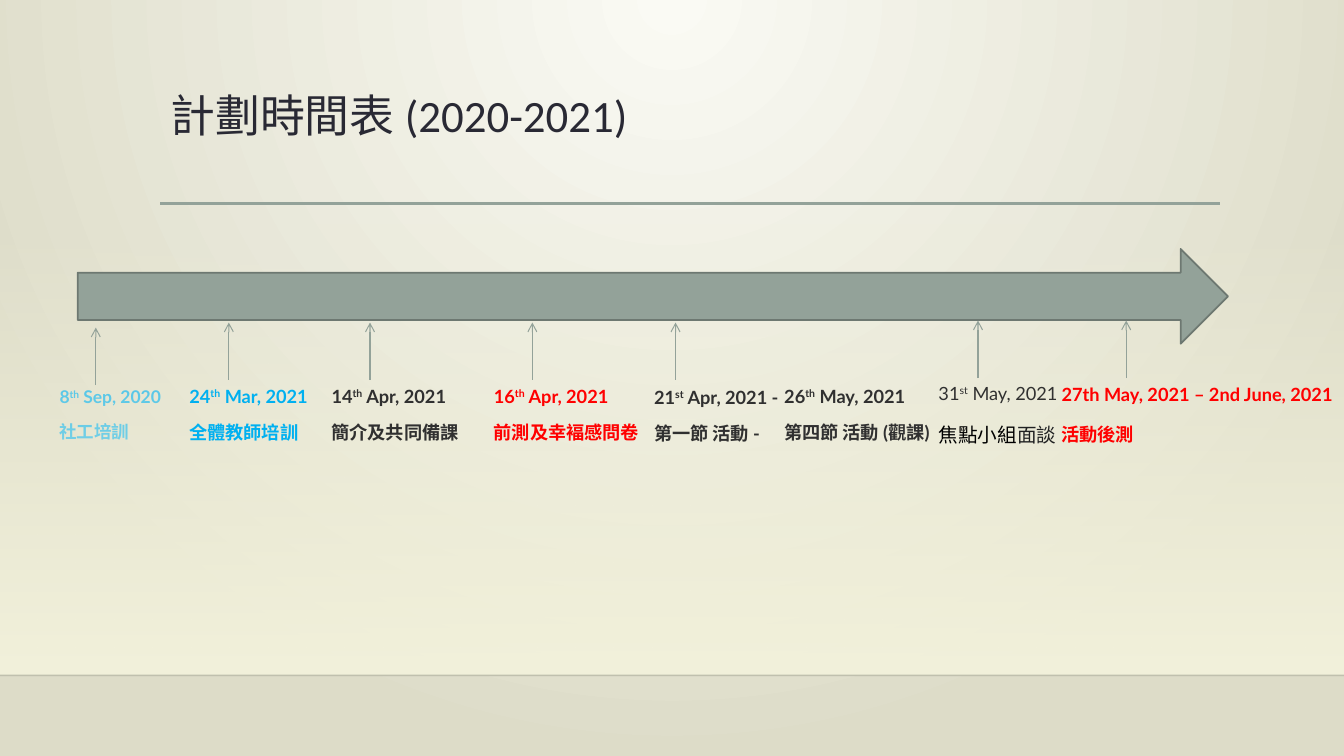
import dataclasses

import pptx
import pptx.dml.color
import pptx.enum.shapes
import pptx.enum.text
import pptx.oxml
import pptx.oxml.ns
import pptx.util

Inches = pptx.util.Inches
qn = pptx.oxml.ns.qn
NAMESPACE = pptx.oxml.ns.nsdecls("a")


@dataclasses.dataclass(frozen=True)
class Theme:
    glow: str = "FAFAF4"
    edge: str = "DDDCC8"
    wall: str = "F3F2DC"
    horizon: str = "000001"
    sage: str = "93A299"
    sage_dark: str = "6D7871"
    title: str = "292934"
    training: str = "00B0F0"
    survey: str = "FF0000"
    lesson: str = "303030"
    black: str = "000000"
    charcoal: str = "202122"
    heading_font: str = "Calibri"
    label_font: str = "Lato"
    plain_font: str = "Arial"
    title_size: float = 32
    first_label_size: float = 12.5
    label_size: float = 13
    interview_size: float = 14
    paragraph_gap: float = 10


@dataclasses.dataclass(frozen=True)
class Style:
    size: float
    color: str
    bold: bool = True
    font: str = Theme.label_font


class TimelineSlide:
    def __init__(self, presentation, theme):
        self.theme = theme
        self.slide = presentation.slides.add_slide(presentation.slide_layouts[1])

    def rgb(self, color):
        return pptx.dml.color.RGBColor.from_string(color)

    def gradient(self, fill, colors):
        fill.gradient()
        for stop, color in zip(fill.gradient_stops, colors):
            stop.color.rgb = self.rgb(color)

    def set_alpha(self, color_element, percent):
        color_element.append(pptx.oxml.parse_xml(f'<a:alpha {NAMESPACE} val="{percent * 1000}"/>'))

    def background(self):
        self.gradient(self.slide.background.fill, (self.theme.glow, self.theme.edge))
        linear = next(self.slide.element.iter(qn("a:lin")))
        linear.getparent().replace(linear, pptx.oxml.parse_xml(
            f'<a:path {NAMESPACE} path="circle">'
            '<a:fillToRect l="43000" t="0" r="43000" b="100000"/></a:path>'))

    def shape(self, kind, left, top, width, height):
        shape = self.slide.shapes.add_shape(
            kind, Inches(left), Inches(top), Inches(width), Inches(height))
        shape.shadow.inherit = False
        return shape

    def wall(self, left, top, width, height):
        shape = self.shape(pptx.enum.shapes.MSO_SHAPE.RECTANGLE, left, top, width, height)
        self.gradient(shape.fill, (self.theme.wall, self.theme.wall))
        shape.fill.gradient_angle = 270
        self.set_alpha(next(shape.element.iter(qn("a:srgbClr"))), 0)
        shape.line.fill.background()

    def block_arrow(self, left, top, width, height):
        shape = self.shape(pptx.enum.shapes.MSO_SHAPE.RIGHT_ARROW, left, top, width, height)
        shape.fill.solid()
        shape.fill.fore_color.rgb = self.rgb(self.theme.sage)
        shape.line.color.rgb = self.rgb(self.theme.sage_dark)
        shape.line.width = pptx.util.Pt(1.25)

    def line(self, start, end, color, width, arrow=False, alpha=100):
        connector = self.slide.shapes.add_connector(
            pptx.enum.shapes.MSO_CONNECTOR.STRAIGHT, *map(Inches, start + end))
        connector.line.color.rgb = self.rgb(color)
        connector.line.width = pptx.util.Pt(width)
        if alpha < 100:
            self.set_alpha(next(connector.element.iter(qn("a:srgbClr"))), alpha)
        if arrow:
            outline = next(connector.element.iter(qn("a:ln")))
            outline.append(pptx.oxml.parse_xml(f'<a:tailEnd {NAMESPACE} type="arrow"/>'))
        properties = next(connector.element.iter(qn("p:spPr")))
        properties.append(pptx.oxml.parse_xml(f"<a:effectLst {NAMESPACE}/>"))

    def run(self, paragraph, text, style, raised=False):
        run = paragraph.add_run()
        run.text = text
        run.font.name = style.font
        run.font.size = pptx.util.Pt(style.size)
        run.font.bold = style.bold
        run.font.color.rgb = self.rgb(style.color)
        if raised:
            run.font._element.set("baseline", "30000")

    def place(self, shape, left, top, width, height):
        shape.left, shape.top = Inches(left), Inches(top)
        shape.width, shape.height = Inches(width), Inches(height)
        frame = shape.text_frame
        frame.word_wrap = True
        frame.auto_size = pptx.enum.text.MSO_AUTO_SIZE.NONE
        frame.vertical_anchor = pptx.enum.text.MSO_ANCHOR.TOP
        return frame

    def format(self, paragraph, spacing=1.0, before=0):
        properties = paragraph._element.get_or_add_pPr()
        properties.set("marL", "0")
        properties.set("indent", "0")
        properties.append(pptx.oxml.parse_xml(f"<a:buNone {NAMESPACE}/>"))
        paragraph.alignment = pptx.enum.text.PP_ALIGN.LEFT
        paragraph.line_spacing = spacing
        paragraph.space_before = pptx.util.Pt(before)

    def title(self, text, *box):
        paragraph = self.place(self.slide.shapes.title, *box).paragraphs[0]
        self.format(paragraph, spacing=0.9)
        self.run(paragraph, text, Style(
            self.theme.title_size, self.theme.title, False, self.theme.heading_font))

    def label(self, shape, box, date, activity, style, spacing=1.0):
        frame = self.place(shape, *box)
        self.format(frame.paragraphs[0])
        for index, text in enumerate(date):
            self.run(frame.paragraphs[0], text, style, raised=index == 1)
        paragraph = frame.add_paragraph()
        self.format(paragraph, spacing, self.theme.paragraph_gap)
        for text, activity_style in activity:
            self.run(paragraph, text, activity_style)

    def text_box(self):
        return self.slide.shapes.add_textbox(0, 0, 0, 0)


def main():
    theme = Theme()
    presentation = pptx.Presentation()
    presentation.slide_width, presentation.slide_height = Inches(13.33), Inches(7.5)
    timeline = TimelineSlide(presentation, theme)

    timeline.background()
    timeline.wall(0, 2.21, 13.33, 4.49)
    timeline.line((0, 6.7), (13.33, 6.7), theme.horizon, 1, alpha=20)
    timeline.line((1.59, 2.02), (12.1, 2.02), theme.sage, 2.5)
    timeline.title("計劃時間表 (2020-2021)", 1.59, 0.88, 10.5, 1.15)
    timeline.block_arrow(0.77, 2.47, 11.41, 0.94)

    pointer_length = 0.57
    for x, tip in ((0.95, 3.25), (2.27, 3.2), (3.67, 3.2), (5.28, 3.2),
                   (6.7, 3.2), (9.7, 3.18), (11.17, 3.18)):
        timeline.line((x, tip + pointer_length), (x, tip), theme.sage, 0.75, arrow=True)

    first = Style(theme.first_label_size, theme.training)
    training = Style(theme.label_size, theme.training)
    lesson = Style(theme.label_size, theme.lesson)
    survey = Style(theme.label_size, theme.survey)
    interview = Style(theme.label_size, theme.lesson, False)
    group = Style(theme.interview_size, theme.black, False, theme.heading_font)
    talk = Style(theme.interview_size, theme.charcoal, False, theme.plain_font)

    timeline.label(timeline.slide.placeholders[1], (0.49, 3.78, 1.74, 0.69),
                   ("8", "th", " Sep, 2020"), [("社工培訓", first)], first)
    for left, top, width, date, activity, style in (
            (1.78, 3.77, 1.49, ("24", "th", " Mar, 2021"), "全體教師培訓", training),
            (3.19, 3.77, 1.66, ("14", "th", " Apr, 2021"), "簡介及共同備課", lesson),
            (4.8, 3.77, 1.66, ("16", "th", " Apr, 2021"), "前測及幸褔感問卷", survey),
            (6.39, 3.78, 1.66, ("21", "st", " Apr, 2021 -"), "第一節 活動 -", lesson),
            (7.68, 3.77, 1.66, ("26", "th", " May, 2021"), "第四節 活動 (觀課)", lesson)):
        timeline.label(timeline.text_box(), (left, top, width, 0.77),
                       date, [(activity, style)], style)
    timeline.label(timeline.text_box(), (9.21, 3.74, 1.66, 0.77), ("31", "st", " May, 2021"),
                   [("焦點小組", group), ("面談", talk)], interview, spacing=1.2)
    timeline.label(timeline.text_box(), (10.43, 3.75, 3.35, 0.77),
                   ("27th May, 2021 – 2nd June, 2021",), [("活動後測", survey)],
                   survey, spacing=1.2)

    presentation.save("out.pptx")


if __name__ == "__main__":
    main()
